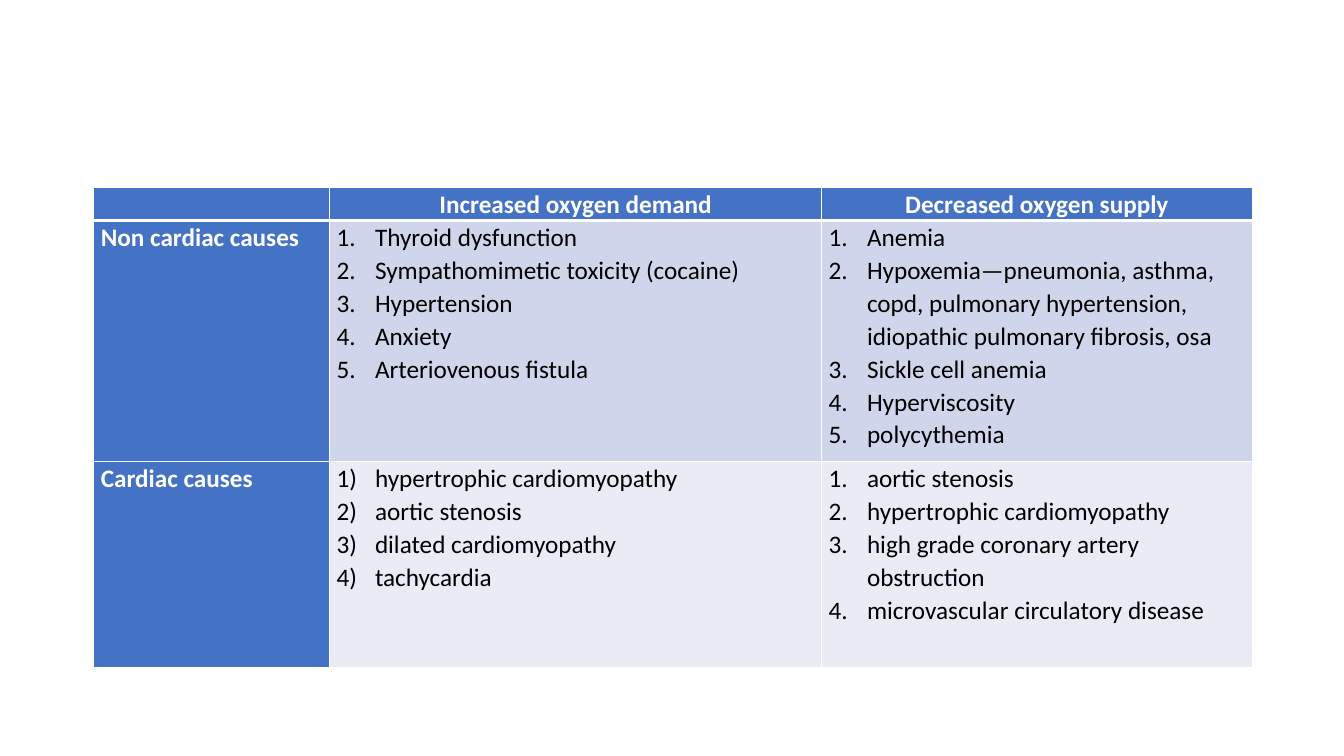
from lxml.etree import SubElement
from pptx import Presentation
from pptx.dml.color import RGBColor
from pptx.enum.text import PP_ALIGN
from pptx.oxml.ns import qn
from pptx.util import Inches, Pt

COLORS = {
    "header": "4472C4",
    "dark band": "CFD5EA",
    "light band": "E9EBF5",
    "border": "FFFFFF",
    "heading text": "FFFFFF",
    "body text": "000000",
}
FONT = "Calibri"
COLUMN_WIDTHS = (2.34, 4.88, 4.27)
ROW_HEIGHTS = (0.29, 2.39, 2.05)
TABLE_LEFT, TABLE_TOP = 0.93, 1.86
LIST_INDENT = Inches(0.38)

COLUMN_HEADINGS = ("", "Increased oxygen demand", "Decreased oxygen supply")
CAUSE_ROWS = (
    ("Non cardiac causes", "dark band", (
        ("arabicPeriod", 0, (
            "Thyroid dysfunction",
            "Sympathomimetic toxicity (cocaine)",
            "Hypertension",
            "Anxiety",
            "Arteriovenous fistula",
        )),
        ("arabicPeriod", 8, (
            "Anemia",
            "Hypoxemia—pneumonia, asthma, copd, pulmonary hypertension, "
            "idiopathic pulmonary fibrosis, osa",
            "Sickle cell anemia",
            "Hyperviscosity",
            "polycythemia",
        )),
    )),
    ("Cardiac causes", "light band", (
        ("arabicParenR", 0, (
            "hypertrophic cardiomyopathy",
            "aortic stenosis",
            "dilated cardiomyopathy",
            "tachycardia",
        )),
        ("arabicPeriod", 8, (
            "aortic stenosis",
            "hypertrophic cardiomyopathy",
            "high grade coronary artery obstruction",
            "microvascular circulatory disease",
        )),
    )),
)


def set_borders(cell, top=1, bottom=1):
    properties = cell._tc.get_or_add_tcPr()
    for side, width in (("L", 1), ("R", 1), ("T", top), ("B", bottom)):
        line = SubElement(properties, qn(f"a:ln{side}"), w=str(Pt(width)))
        fill = SubElement(line, qn("a:solidFill"))
        SubElement(fill, qn("a:srgbClr"), val=COLORS["border"])


def format_cell(cell, fill, **borders):
    set_borders(cell, **borders)
    cell.fill.solid()
    cell.fill.fore_color.rgb = RGBColor.from_string(COLORS[fill])
    cell.margin_left = cell.margin_right = Inches(0.07)
    cell.margin_top = cell.margin_bottom = 0


def format_paragraph(paragraph, color, bold, space_after):
    paragraph.line_spacing = 1.07
    paragraph.space_after = Pt(space_after)
    for run in paragraph.runs:
        run.font.name = FONT
        run.font.size = Pt(18)
        run.font.bold = bold
        run.font.color.rgb = RGBColor.from_string(COLORS[color])


def fill_heading(cell, text, alignment, **borders):
    format_cell(cell, "header", **borders)
    cell.text_frame.text = text
    paragraph = cell.text_frame.paragraphs[0]
    paragraph.alignment = alignment
    format_paragraph(paragraph, "heading text", True, 8)


def fill_list(cell, items, numbering, last_space, fill, **borders):
    format_cell(cell, fill, **borders)
    cell.text_frame.text = "\n".join(items)
    paragraphs = cell.text_frame.paragraphs
    for position, paragraph in enumerate(paragraphs, start=1):
        space_after = last_space if position == len(paragraphs) else 0
        format_paragraph(paragraph, "body text", False, space_after)
        properties = paragraph._p.get_or_add_pPr()
        properties.set("marL", str(LIST_INDENT))
        properties.set("indent", str(-LIST_INDENT))
        SubElement(properties, qn("a:buFont"), typeface="+mj-lt")
        SubElement(properties, qn("a:buAutoNum"), type=numbering)


def add_causes_table(slide):
    table = slide.shapes.add_table(
        len(ROW_HEIGHTS), len(COLUMN_WIDTHS),
        Inches(TABLE_LEFT), Inches(TABLE_TOP),
        Inches(sum(COLUMN_WIDTHS)), Inches(sum(ROW_HEIGHTS)),
    ).table
    for column, width in zip(table.columns, COLUMN_WIDTHS):
        column.width = Inches(width)
    for row, height in zip(table.rows, ROW_HEIGHTS):
        row.height = Inches(height)
    return table


def main():
    presentation = Presentation()
    presentation.slide_width = Inches(13.33)
    presentation.slide_height = Inches(7.5)
    slide = presentation.slides.add_slide(presentation.slide_layouts[6])
    table = add_causes_table(slide)
    for column, heading in enumerate(COLUMN_HEADINGS):
        fill_heading(table.cell(0, column), heading, PP_ALIGN.CENTER, bottom=3)
    for row, (heading, band, lists) in enumerate(CAUSE_ROWS, start=1):
        top = 3 if row == 1 else 1
        fill_heading(table.cell(row, 0), heading, PP_ALIGN.LEFT, top=top)
        for column, (numbering, last_space, items) in enumerate(lists, start=1):
            fill_list(table.cell(row, column), items, numbering, last_space,
                      band, top=top)
    presentation.save("out.pptx")


if __name__ == "__main__":
    main()
